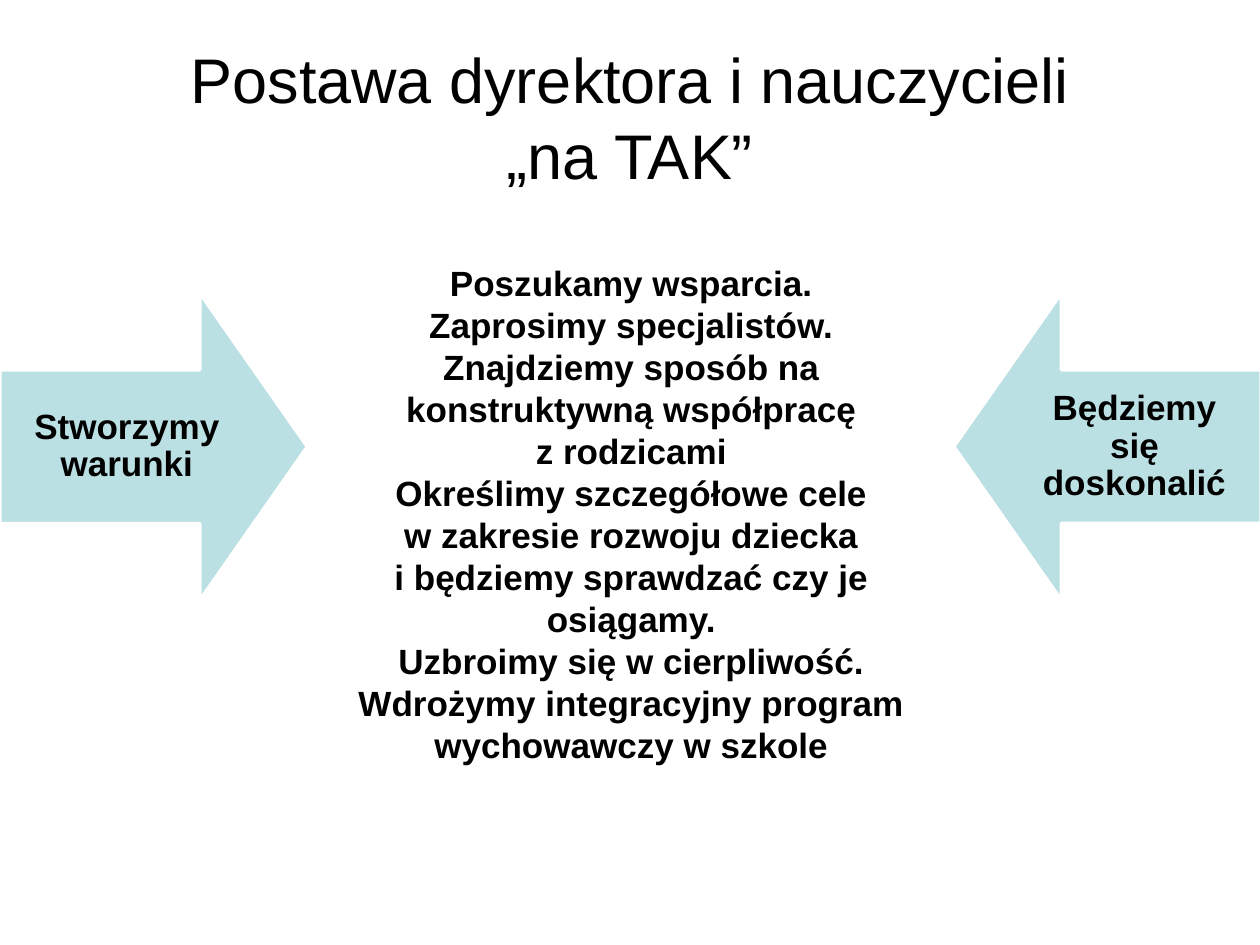
from pptx import Presentation
from pptx.dml.color import RGBColor
from pptx.enum.shapes import MSO_SHAPE as Shape
from pptx.enum.text import MSO_ANCHOR as Anchor, MSO_AUTO_SIZE as AutoSize, PP_ALIGN as Align
from pptx.util import Inches, Pt

COLORS = {"text": "000000", "arrow": "BBE0E3", "edge": "FFFFFF"}
FONT = "Arial"
SLIDE_W, SLIDE_H = Inches(10), Inches(7.5)

PLEDGES = [
    "Poszukamy wsparcia.",
    "Zaprosimy specjalistów.",
    "Znajdziemy sposób na konstruktywną współpracę",
    "z rodzicami",
    "Określimy szczegółowe cele",
    "w zakresie rozwoju dziecka",
    "i będziemy sprawdzać czy je osiągamy.",
    "Uzbroimy się w cierpliwość.",
    "Wdrożymy integracyjny program wychowawczy w szkole",
]


def color(name):
    return RGBColor.from_string(COLORS[name])


def share(x, y, w, h):
    """Turn shares of the slide into a box of lengths."""
    return (round(x * SLIDE_W), round(y * SLIDE_H),
            round(w * SLIDE_W), round(h * SLIDE_H))


def add_run(paragraph, words, size, bold):
    paragraph.alignment = Align.CENTER
    run = paragraph.add_run()
    run.text = words
    run.font.name, run.font.size, run.font.bold = FONT, Pt(size), bold
    run.font.color.rgb = color("text")


def add_title(slide, box, lines):
    title = slide.shapes.title
    title.left, title.top, title.width, title.height = box
    frame = title.text_frame
    frame.word_wrap = True
    frame.auto_size = AutoSize.NONE
    frame.vertical_anchor = Anchor.MIDDLE
    heading = frame.paragraphs[0]
    for i, line in enumerate(lines):
        if i:
            heading.add_line_break()
        add_run(heading, line, 36, False)


def add_pledges(slide, box, pledges):
    frame = slide.shapes.add_textbox(*box).text_frame
    frame.word_wrap = True
    frame.auto_size = AutoSize.SHAPE_TO_FIT_TEXT
    for i, pledge in enumerate(pledges):
        paragraph = frame.add_paragraph() if i else frame.paragraphs[0]
        add_run(paragraph, pledge, 20, True)


def add_side_arrow(slide, box, words, points_right):
    left, top, side, _ = box
    # Arrow turned towards the centre of the slide
    arrow = slide.shapes.add_shape(Shape.DOWN_ARROW, left, top, side, side)
    arrow.rotation = 270 if points_right else 90
    arrow.adjustments[0], arrow.adjustments[1] = 0.5, 0.35
    arrow.shadow.inherit = False
    arrow.fill.solid()
    arrow.fill.fore_color.rgb = color("arrow")
    arrow.line.color.rgb = color("edge")
    arrow.line.width = Pt(2)

    # Label over the shaft and part of the head
    label_w = round(side * 0.825)
    label_left = left if points_right else left + side - label_w
    label = slide.shapes.add_textbox(label_left, top + side // 4, label_w, side // 2)
    frame = label.text_frame
    frame.word_wrap = True
    frame.vertical_anchor = Anchor.MIDDLE
    frame.margin_left = frame.margin_right = Inches(0.16)
    frame.margin_top = frame.margin_bottom = Inches(0.16)
    frame.paragraphs[0].line_spacing = 0.9
    add_run(frame.paragraphs[0], words, 20, True)


def main():
    deck = Presentation()
    deck.slide_width, deck.slide_height = SLIDE_W, SLIDE_H
    slide = deck.slides.add_slide(deck.slide_layouts[5])

    add_title(slide, share(0.05, 0.04, 0.9, 1 / 6),
              ["Postawa dyrektora i nauczycieli", "„na TAK”"])
    add_pledges(slide, share(0.245, 0.27, 0.512, 0.552), PLEDGES)
    for x, words, points_right in [(0, "Stworzymy warunki", True),
                                   (0.757, "Będziemy się doskonalić", False)]:
        add_side_arrow(slide, share(x, 0.31, 0.244, 0.325), words, points_right)

    deck.save("out.pptx")


if __name__ == "__main__":
    main()
